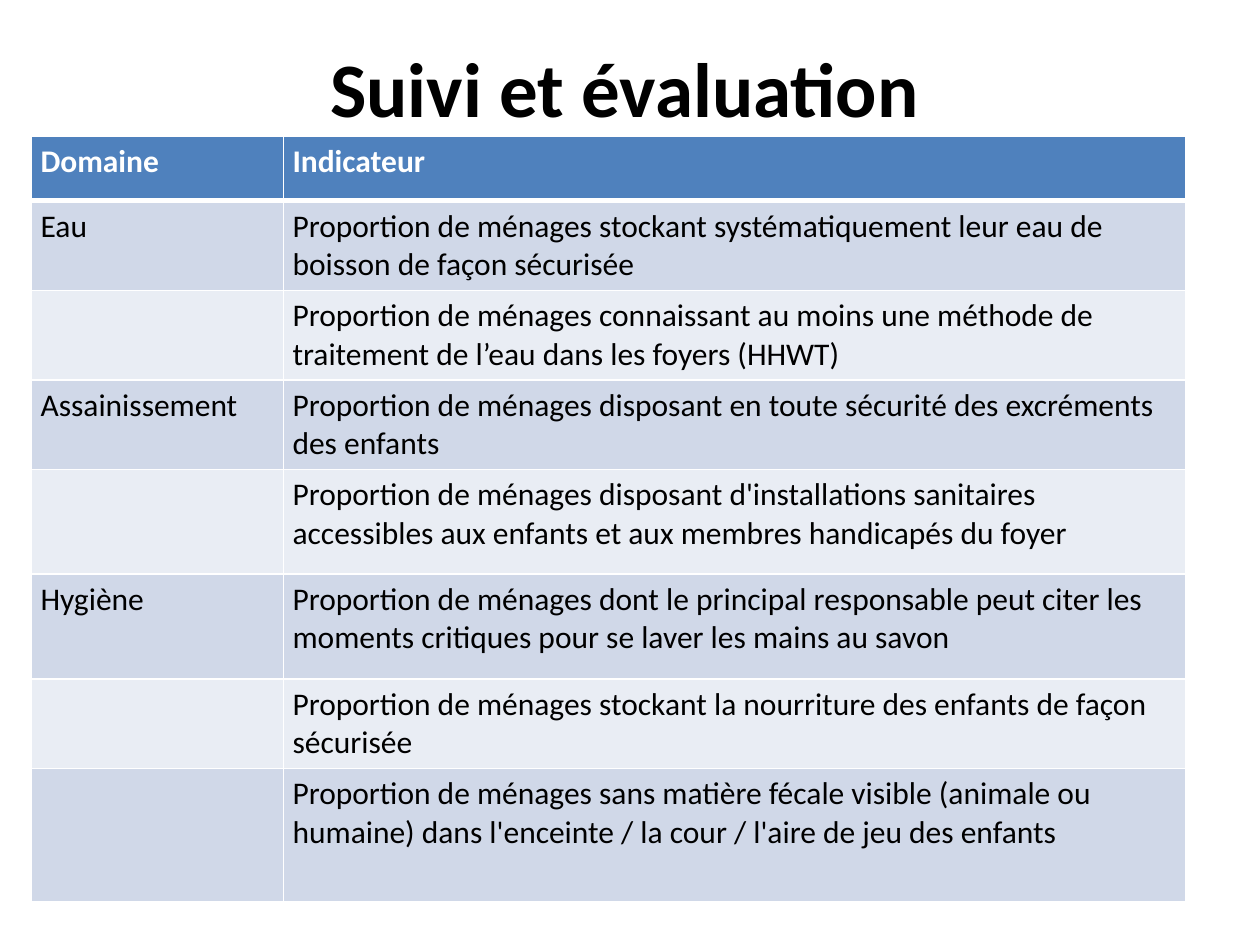
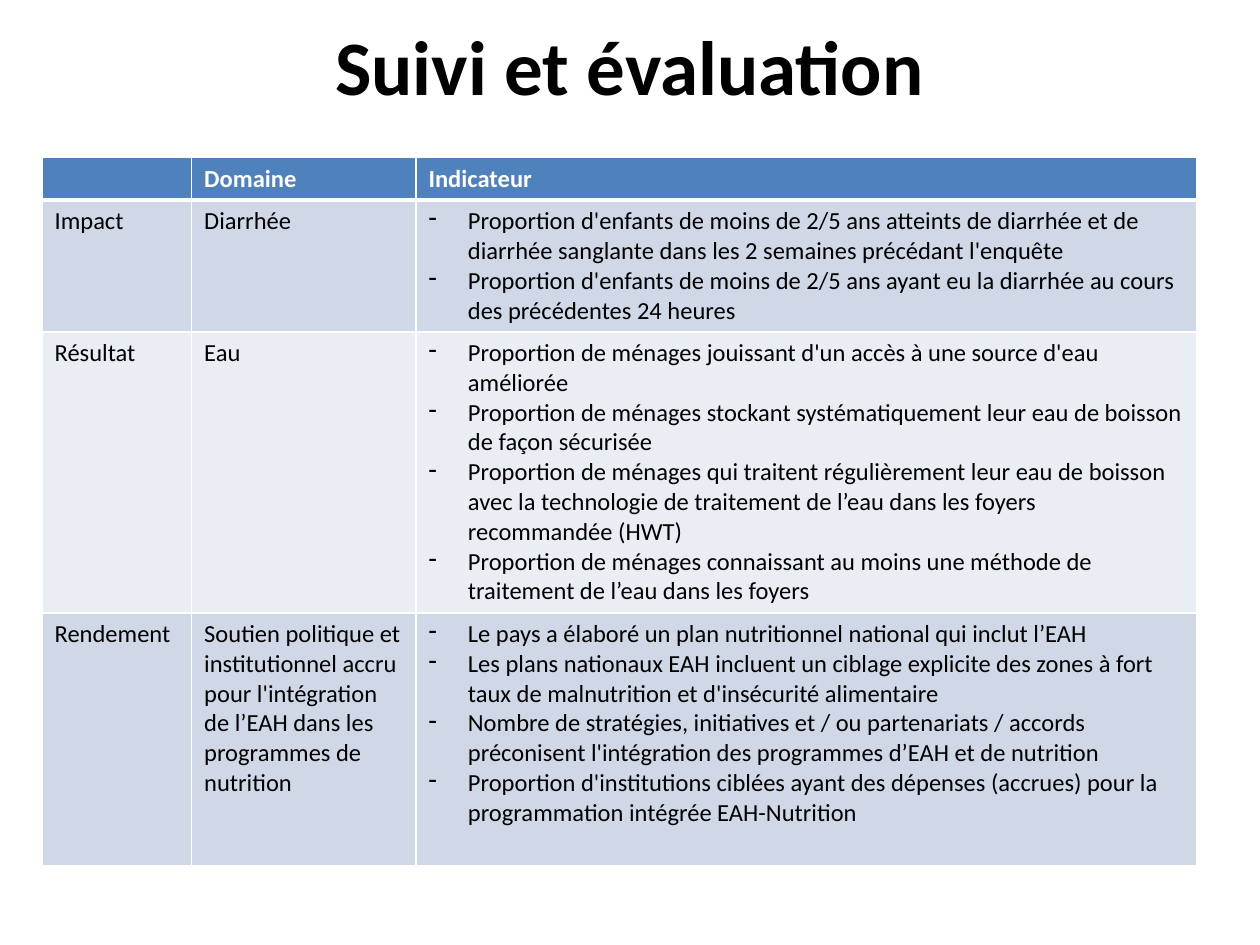
from lxml import etree
from pptx import Presentation
from pptx.dml.color import RGBColor
from pptx.enum.text import MSO_ANCHOR, PP_ALIGN
from pptx.oxml import parse_xml
from pptx.oxml.ns import nsdecls, qn
from pptx.util import Pt

MIDDLE = MSO_ANCHOR.MIDDLE
CENTER = PP_ALIGN.CENTER
FONT = "Calibri"
WHITE = RGBColor(0xFF, 0xFF, 0xFF)
BLACK = RGBColor(0, 0, 0)
BLUE = RGBColor(0x4F, 0x81, 0xBD)
BANDS = [RGBColor(0xD0, 0xD8, 0xE8), RGBColor(0xE9, 0xED, 0xF4)]
TITLE = "Suivi et évaluation"
INDENT = 22.5

SLIDES = [
    {
        "title": (42, 21.6, 630, 56),
        "place": (18, 78),
        "widths": [144, 515.5],
        "heights": [36.7, 51.1, 51.1, 51.1, 59.9, 59.9, 51.1, 76.3],
        "size": 18,
        "margin": 5.2,
        "rows": [
            ("Domaine", "Indicateur"),
            ("Eau", "Proportion de ménages stockant systématiquement leur eau de boisson de façon sécurisée"),
            ("", "Proportion de ménages connaissant au moins une méthode de traitement de l’eau dans les foyers (HHWT)"),
            ("Assainissement", "Proportion de ménages disposant en toute sécurité des excréments des enfants"),
            ("", "Proportion de ménages disposant d'installations sanitaires accessibles aux enfants et aux membres handicapés du foyer"),
            ("Hygiène", "Proportion de ménages dont le principal responsable peut citer les moments critiques pour se laver les mains au savon"),
            ("", "Proportion de ménages stockant la nourriture des enfants de façon sécurisée"),
            ("", "Proportion de ménages sans matière fécale visible (animale ou humaine) dans l'enceinte / la cour / l'aire de jeu des enfants"),
        ],
    },
    {
        "title": (36, 6, 648, 62.5),
        "place": (24, 90),
        "widths": [85.5, 128.2, 446.3],
        "heights": [24, 75.4, 160.6, 144.6],
        "size": 14,
        "margin": 7.2,
        "rows": [
            ("", "Domaine", "Indicateur"),
            ("Impact", "Diarrhée", [
                "Proportion d'enfants de moins de 2/5 ans atteints de diarrhée et de diarrhée sanglante dans les 2 semaines précédant l'enquête",
                "Proportion d'enfants de moins de 2/5 ans ayant eu la diarrhée au cours des précédentes 24 heures",
            ]),
            ("Résultat", "Eau", [
                "Proportion de ménages jouissant d'un accès à une source d'eau améliorée",
                "Proportion de ménages stockant systématiquement leur eau de boisson de façon sécurisée",
                "Proportion de ménages qui traitent régulièrement leur eau de boisson avec la technologie de traitement de l’eau dans les foyers recommandée (HWT)",
                "Proportion de ménages connaissant au moins une méthode de traitement de l’eau dans les foyers",
            ]),
            ("Rendement", "Soutien politique et institutionnel accru pour l'intégration de l’EAH dans les programmes de nutrition", [
                "Le pays a élaboré un plan nutritionnel national qui inclut l’EAH",
                "Les plans nationaux EAH incluent un ciblage explicite des zones à fort taux de malnutrition et d'insécurité alimentaire",
                "Nombre de stratégies, initiatives et / ou partenariats / accords préconisent l'intégration des programmes d’EAH et de nutrition",
                "Proportion d'institutions ciblées ayant des dépenses (accrues) pour la programmation intégrée EAH-Nutrition",
            ]),
        ],
    },
]


def style(par, size, color, bold):
    font = par.font
    font.name, font.size, font.bold = FONT, Pt(size), bold
    font.color.rgb = color


def add_dash(par):
    props = par._p.get_or_add_pPr()
    props.set("marL", str(Pt(INDENT)))
    props.set("indent", str(-Pt(INDENT)))
    etree.SubElement(props, qn("a:buChar")).set("char", "-")


def add_lines(cell, row):
    props = cell._tc.get_or_add_tcPr()
    top = 3 if row == 1 else 1
    base = 3 if row == 0 else 1
    for spot, (side, width) in enumerate([("L", 1), ("R", 1), ("T", top), ("B", base)]):
        props.insert(spot, parse_xml(
            f'<a:ln{side} {nsdecls("a")} w="{Pt(width)}"><a:solidFill>'
            f'<a:srgbClr val="{WHITE}"/></a:solidFill></a:ln{side}>'))


def fill_cell(cell, text, row, size, margin):
    head = row == 0
    cell.fill.solid()
    cell.fill.fore_color.rgb = BLUE if head else BANDS[(row - 1) % 2]
    add_lines(cell, row)
    cell.margin_left = cell.margin_right = Pt(margin)
    cell.margin_top = cell.margin_bottom = Pt(3.6 if text else 0)
    if not text:
        return
    listed = isinstance(text, list)
    cell.text_frame.text = "\n".join(text) if listed else text
    for par in cell.text_frame.paragraphs:
        if listed:
            add_dash(par)
        style(par, size, WHITE if head else BLACK, head)


def add_title(slide, box):
    title = slide.shapes.title
    title.left, title.top, title.width, title.height = map(Pt, box)
    frame = title.text_frame
    frame.text = TITLE
    frame.vertical_anchor = MIDDLE
    par = frame.paragraphs[0]
    par.alignment = CENTER
    style(par, 44, BLACK, True)


def add_grid(slide, data):
    rows, widths, heights = data["rows"], data["widths"], data["heights"]
    box = (*data["place"], sum(widths), sum(heights))
    table = slide.shapes.add_table(len(rows), len(widths), *map(Pt, box)).table
    for col, width in zip(table.columns, widths):
        col.width = Pt(width)
    for row, height in zip(table.rows, heights):
        row.height = Pt(height)
    for i, texts in enumerate(rows):
        for j, text in enumerate(texts):
            fill_cell(table.cell(i, j), text, i, data["size"], data["margin"])


def main():
    deck = Presentation()
    deck.slide_width, deck.slide_height = Pt(720), Pt(540)
    for data in SLIDES:
        slide = deck.slides.add_slide(deck.slide_layouts[5])
        add_title(slide, data["title"])
        add_grid(slide, data)
    deck.save("out.pptx")


if __name__ == "__main__":
    main()
